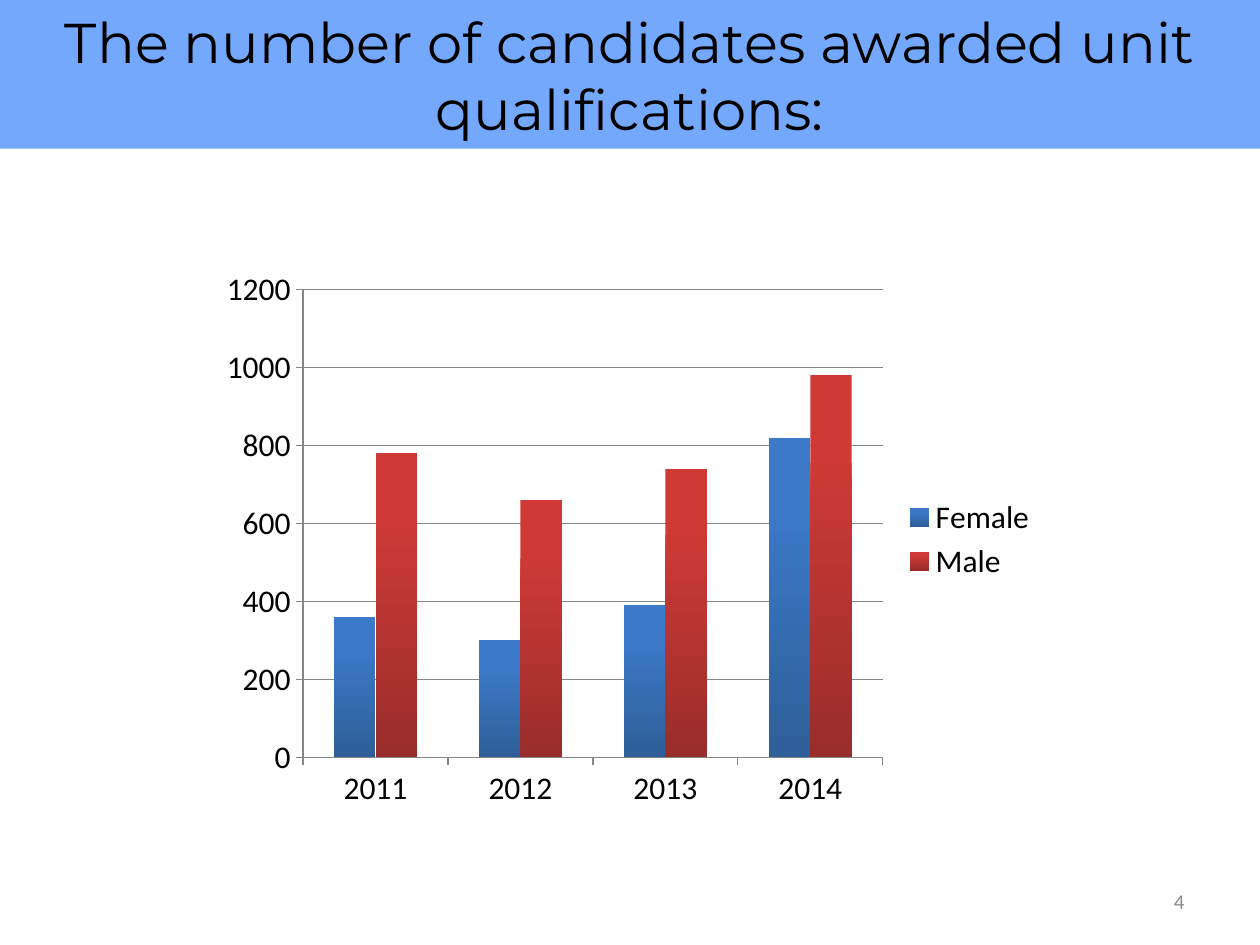
from pptx import Presentation
from pptx import util as u
from pptx.chart.data import CategoryChartData
from pptx.dml.color import RGBColor
from pptx.enum import chart as ch, text

COLORS = {
    "banner": "74A8FC",
    "ink": "000000",
    "number": "8C8C8C",
    "axis": "868686",
}
CANDIDATES = {
    "Female": ((360, 300, 390, 820), ("3C7AC9", "2E5F98")),
    "Male": ((780, 660, 740, 980), ("CF3A36", "992D2B")),
}


def color(name):
    return RGBColor.from_string(COLORS[name])


def set_text(shape, wording, align, font_name, size, color_name):
    frame = shape.text_frame
    frame.text = wording
    frame.word_wrap = True
    frame.auto_size = text.MSO_AUTO_SIZE.NONE
    frame.vertical_anchor = text.MSO_ANCHOR.MIDDLE
    paragraph = frame.paragraphs[0]
    paragraph.alignment = align
    font = paragraph.runs[0].font
    font.name, font.size = font_name, u.Pt(size)
    font.color.rgb = color(color_name)


prs = Presentation()
prs.slide_width, prs.slide_height = u.Inches(10), u.Inches(7.5)
width, height = prs.slide_width, prs.slide_height
slide = prs.slides.add_slide(prs.slide_layouts[5])

# Chart: two thirds of the slide's width, centred
data = CategoryChartData()
data.categories = ["2011", "2012", "2013", "2014"]
for sex, (counts, _) in CANDIDATES.items():
    data.add_series(sex, counts)
chart = slide.shapes.add_chart(
    ch.XL_CHART_TYPE.COLUMN_CLUSTERED,
    width // 6, u.Inches(2.06), width * 2 // 3, u.Inches(4.44), data,
).chart
chart.has_title = False
chart.font.name, chart.font.size = "Calibri", u.Pt(18)
chart.font.color.rgb = color("ink")
chart.has_legend = True
chart.legend.position = ch.XL_LEGEND_POSITION.RIGHT
chart.legend.include_in_layout = False

counts_axis = chart.value_axis
counts_axis.minimum_scale, counts_axis.maximum_scale = 0, 1200
counts_axis.major_unit = 200
counts_axis.has_major_gridlines = True
for axis in (chart.category_axis, counts_axis):
    axis.major_tick_mark = ch.XL_TICK_MARK.OUTSIDE
for ruled in (chart.category_axis, counts_axis, counts_axis.major_gridlines):
    ruled.format.line.color.rgb = color("axis")
    ruled.format.line.width = u.Pt(0.75)

columns = chart.plots[0]
columns.gap_width = 150
columns.overlap = 0
columns.vary_by_categories = False
for series, (_, shades) in zip(columns.series, CANDIDATES.values()):
    series.invert_if_negative = False
    fill = series.format.fill
    fill.gradient()
    fill.gradient_angle = 270
    for stop, shade, position in zip(fill.gradient_stops, shades, (0.2, 1)):
        stop.color.rgb = RGBColor.from_string(shade)
        stop.position = position

# Slide number
number = slide.shapes.add_textbox(
    u.Inches(7.17), u.Inches(6.95), u.Inches(2.33), u.Inches(0.4))
set_text(number, "4", text.PP_ALIGN.RIGHT, "Calibri", 12, "number")

# Title banner across the top
banner = slide.shapes.title
banner.left, banner.top = 0, 0
banner.width, banner.height = width, u.Inches(1.18)
banner.fill.solid()
banner.fill.fore_color.rgb = color("banner")
set_text(banner, "The number of candidates awarded unit qualifications:",
         text.PP_ALIGN.CENTER, "Montserrat", 32, "ink")

prs.save("out.pptx")
